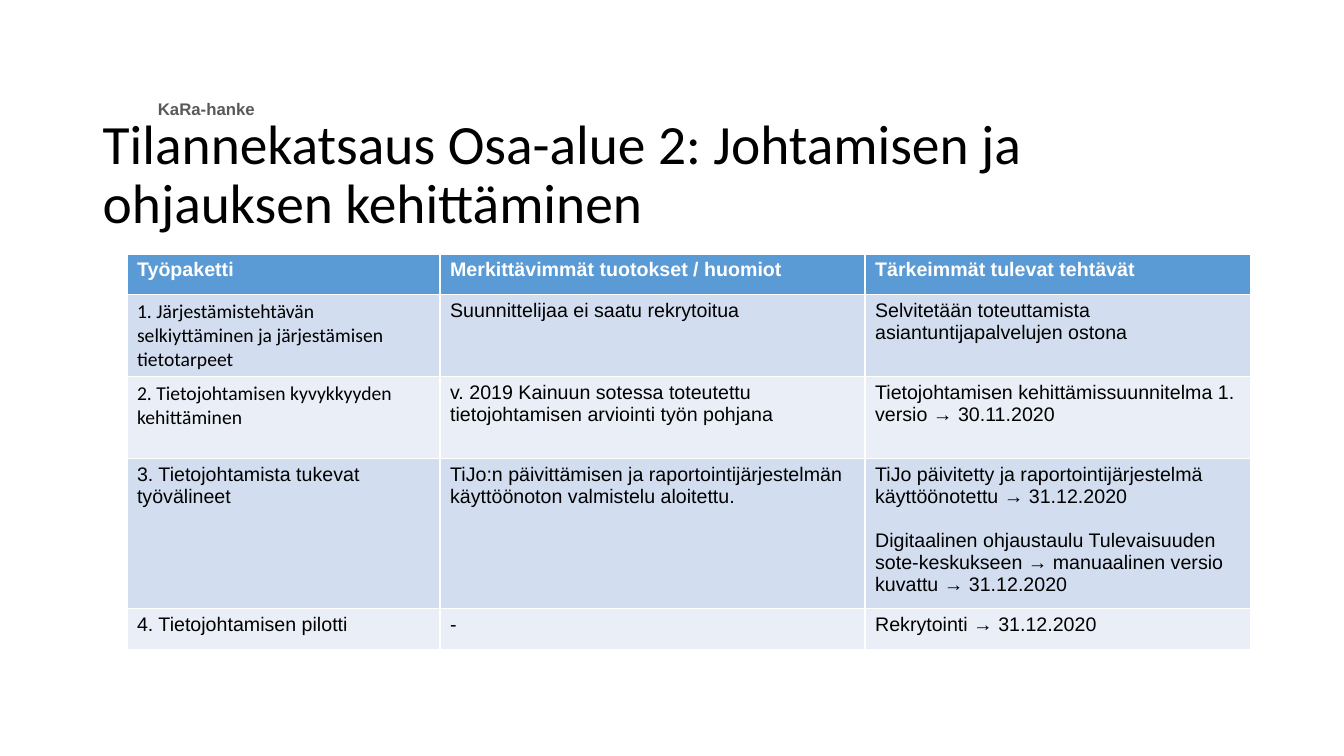
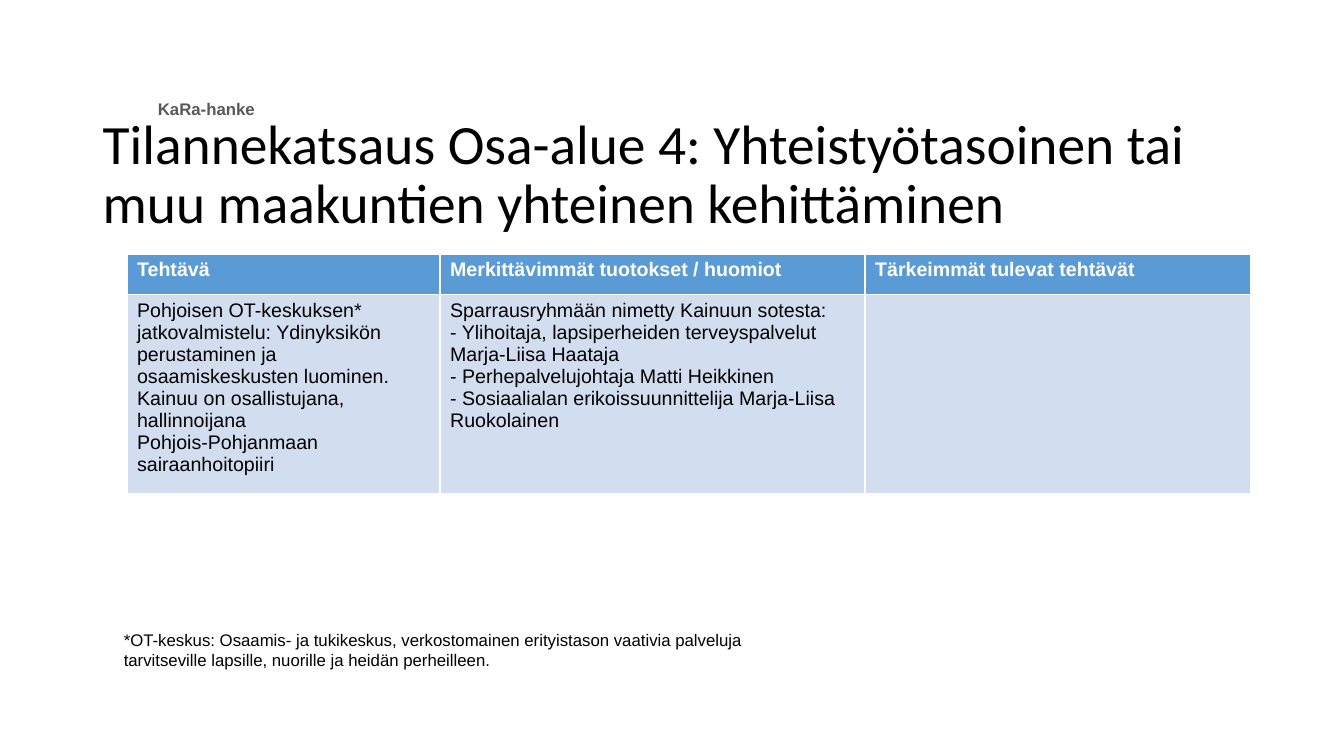
from pptx import Presentation
from pptx.dml.color import RGBColor
from pptx.enum import text
from pptx.util import Cm, Pt

BLACK = RGBColor(0x00, 0x00, 0x00)
WHITE = RGBColor(0xFF, 0xFF, 0xFF)
GREY = RGBColor(0x59, 0x59, 0x59)
HEADER_BLUE = RGBColor(0x5B, 0x9B, 0xD5)
BANDS = (RGBColor(0xD2, 0xDE, 0xEF), RGBColor(0xEA, 0xEF, 0xF7))

BODY_FONT = "Arial"
TITLE_FONT = "Calibri"

# Boxes: left, top, width, height in centimetres
LABEL_BOX = (3.73, 2.36, 3.56, 0.76)
TITLE_BOX = (2.34, 3.48, 29.21, 1.91)
NOTE_BOX = (2.87, 15.75, 16.18, 1.27)
TABLE_CORNER = (3.2, 6.4)
COLUMN_WIDTHS = (7.89, 10.71, 9.72)
ROW_HEIGHT = 1.03
PARAGRAPH_GAP = Pt(16)

RESULT_HEADERS = ["Merkittävimmät tuotokset / huomiot", "Tärkeimmät tulevat tehtävät"]


def style(paragraph, size, color=BLACK, name=BODY_FONT, bold=False):
    font = paragraph.font
    font.size, font.name, font.bold = Pt(size), name, bold
    font.color.rgb = color


def add_text(slide, box, words, size, **look):
    shape = slide.shapes.add_textbox(*map(Cm, box))
    frame = shape.text_frame
    frame.word_wrap = True
    frame.text = words
    style(frame.paragraphs[0], size, **look)
    return frame


def add_title(slide, box, words):
    frame = add_text(slide, box, words, 39.6, name=TITLE_FONT)
    frame.vertical_anchor = text.MSO_ANCHOR.MIDDLE
    frame.paragraphs[0].line_spacing = 0.9


def fill_cell(cell, words, fill, gap=0, **look):
    cell.fill.solid()
    cell.fill.fore_color.rgb = fill
    cell.text_frame.text = words
    for index, paragraph in enumerate(cell.text_frame.paragraphs):
        style(paragraph, 14, **look)
        if index and gap:
            paragraph.space_before = gap


def add_status_table(slide, corner, first_header, rows, heights, calibri_rows=(), gap=0):
    """Header row plus banded rows; calibri_rows have a Calibri first cell."""
    left, top = corner
    heights = [ROW_HEIGHT, *heights]
    frame = slide.shapes.add_table(
        len(heights), len(COLUMN_WIDTHS), Cm(left), Cm(top),
        Cm(sum(COLUMN_WIDTHS)), Cm(sum(heights)))
    table = frame.table
    for column, width in zip(table.columns, COLUMN_WIDTHS):
        column.width = Cm(width)
    for row, height in zip(table.rows, heights):
        row.height = Cm(height)

    for cell, words in zip(table.rows[0].cells, [first_header, *RESULT_HEADERS]):
        fill_cell(cell, words, HEADER_BLUE, color=WHITE, bold=True)
    for index, values in enumerate(rows):
        for column, words in enumerate(values):
            name = TITLE_FONT if column == 0 and index in calibri_rows else BODY_FONT
            fill_cell(table.cell(index + 1, column), words, BANDS[index % 2],
                      gap=gap, name=name)


def add_status_slide(presentation, title):
    slide = presentation.slides.add_slide(presentation.slide_layouts[6])
    add_text(slide, LABEL_BOX, "KaRa-hanke", 12, color=GREY, bold=True)
    add_title(slide, TITLE_BOX, title)
    return slide


def main():
    presentation = Presentation()
    presentation.slide_width, presentation.slide_height = Cm(33.87), Cm(19.05)

    # Part 2: management and steering
    slide = add_status_slide(
        presentation, "Tilannekatsaus Osa-alue 2: Johtamisen ja ohjauksen kehittäminen")
    add_status_table(slide, TABLE_CORNER, "Työpaketti", [
        ("1. Järjestämistehtävän selkiyttäminen ja järjestämisen tietotarpeet",
         "Suunnittelijaa ei saatu rekrytoitua",
         "Selvitetään toteuttamista asiantuntijapalvelujen ostona"),
        ("2. Tietojohtamisen kyvykkyyden kehittäminen",
         "v. 2019 Kainuun sotessa toteutettu tietojohtamisen arviointi työn pohjana",
         "Tietojohtamisen kehittämissuunnitelma 1. versio → 30.11.2020"),
        ("3. Tietojohtamista tukevat työvälineet",
         "TiJo:n päivittämisen ja raportointijärjestelmän käyttöönoton valmistelu aloitettu.",
         "TiJo päivitetty ja raportointijärjestelmä käyttöönotettu → 31.12.2020\n"
         "Digitaalinen ohjaustaulu Tulevaisuuden sote-keskukseen → manuaalinen versio "
         "kuvattu → 31.12.2020"),
        ("4. Tietojohtamisen pilotti", "-", "Rekrytointi → 31.12.2020"),
    ], heights=(2.06, 2.06, 3.64, ROW_HEIGHT), calibri_rows=(0, 1), gap=PARAGRAPH_GAP)

    # Part 4: joint development of the regions
    slide = add_status_slide(
        presentation,
        "Tilannekatsaus Osa-alue 4: Yhteistyötasoinen tai muu maakuntien yhteinen kehittäminen")
    add_status_table(slide, TABLE_CORNER, "Tehtävä", [
        ("Pohjoisen OT-keskuksen* jatkovalmistelu: Ydinyksikön perustaminen ja "
         "osaamiskeskusten luominen.\n"
         "Kainuu on osallistujana, hallinnoijana\n"
         "Pohjois-Pohjanmaan sairaanhoitopiiri",
         "Sparrausryhmään nimetty Kainuun sotesta:\n"
         "- Ylihoitaja, lapsiperheiden terveyspalvelut Marja-Liisa Haataja\n"
         "- Perhepalvelujohtaja Matti Heikkinen\n"
         "- Sosiaalialan erikoissuunnittelija Marja-Liisa Ruokolainen",
         ""),
    ], heights=(4.7,))
    add_text(slide, NOTE_BOX,
             "*OT-keskus: Osaamis- ja tukikeskus, verkostomainen erityistason vaativia "
             "palveluja tarvitseville lapsille, nuorille ja heidän perheilleen.", 12)

    presentation.save("out.pptx")


if __name__ == "__main__":
    main()
